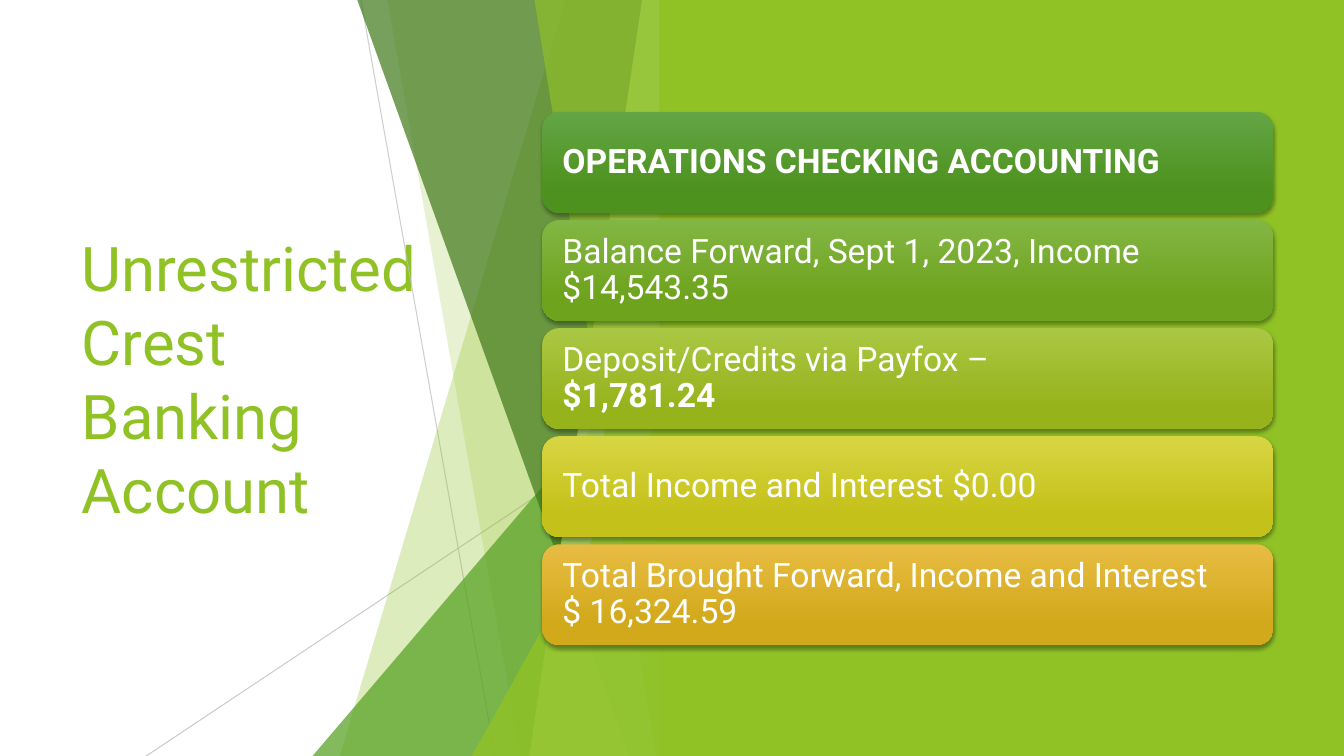
"""Build a slide listing the balances of an operations account."""
from dataclasses import dataclass

from lxml.etree import SubElement as Sub
from pptx import Presentation
from pptx.dml.color import RGBColor as Rgb
from pptx.enum.shapes import MSO_CONNECTOR as Link, MSO_SHAPE as Kind
from pptx.enum.text import MSO_ANCHOR as Anchor, MSO_AUTO_SIZE as Auto, PP_ALIGN as Align
from pptx.oxml.ns import qn
from pptx.util import Inches, Pt


@dataclass(frozen=True)
class Theme:
    font: str = "Roboto"
    title: int = 44
    body: int = 24
    lime: str = "90C226"
    green: str = "54A021"
    dark: str = "3F7819"
    pale: str = "C0E474"
    grey: str = "BFBFBF"
    white: str = "FFFFFF"
    black: str = "000000"


@dataclass(frozen=True)
class Ray:
    start: tuple[float, float]
    end: tuple[float, float]
    alpha: int


@dataclass(frozen=True)
class Blade:
    top: float
    base: float
    tint: str
    alpha: int


@dataclass(frozen=True)
class Wedge:
    left: float
    top: float
    tint: str
    alpha: int


@dataclass(frozen=True)
class Bit:
    text: str
    bold: bool = False


@dataclass(frozen=True)
class Card:
    light: str
    deep: str
    bits: tuple[Bit, ...]


LOOK = Theme()
WIDE, HIGH = 13.33, 7.5
EDGE, ROOF = 6.66, -0.01
CARD_TOP, CARD_END, CARD_HIGH = 1.11, 6.4, 1

RAYS = (
    Ray((3.58, 0), (4.91, HIGH), 75),
    Ray((EDGE, 4.03), (1.45, HIGH), 80),
)
FACETS = (
    Blade(5.61, 3.37, LOOK.lime, 30),
    Blade(3.84, 5.16, LOOK.lime, 20),
    Wedge(3.1, 3.33, LOOK.green, 72),
    Blade(3.54, 6.24, LOOK.dark, 70),
    Blade(6.37, 5.25, LOOK.pale, 70),
    Blade(5.3, 6.51, LOOK.lime, 65),
    Wedge(4.68, 3.93, LOOK.lime, 80),
)
CARDS = (
    Card("63A545", "4D921E", (Bit("OPERATIONS CHECKING ACCOUNTING", True),)),
    Card("82B644", "6EA31D", (Bit("Balance Forward, Sept 1, 2023, Income"), Bit("$14,543.35"))),
    Card("AAC744", "97B31C", (Bit("Deposit/Credits via Payfox –"), Bit("$1,781.24", True))),
    Card("D8D543", "C4C11A", (Bit("Total Income and Interest $0.00"),)),
    Card("E7BC43", "D2A91B", (Bit("Total Brought Forward, Income and Interest"), Bit("$ 16,324.59"))),
)


def fade(fill, alpha: int) -> None:
    tone = fill._xPr.find(".//" + qn("a:srgbClr"))
    Sub(tone, qn("a:alpha"), val=str(alpha * 1000))


def paint(shape, tint: str, alpha: int = 100) -> None:
    shape.shadow.inherit = False
    shape.line.fill.background()
    shape.fill.solid()
    shape.fill.fore_color.rgb = Rgb.from_string(tint)
    if alpha < 100:
        fade(shape.fill, alpha)


def write(para, text: str, *, size: int, tint: str, bold: bool = False) -> None:
    run = para.add_run()
    run.text = text
    run.font.name, run.font.size, run.font.bold = LOOK.font, Pt(size), bold
    run.font.color.rgb = Rgb.from_string(tint)


def draw_title(slide, text: str) -> None:
    title = slide.shapes.title
    title.left, title.top = Inches(0.71), Inches(1.51)
    title.width, title.height = Inches(3.88), Inches(4.48)
    frame = title.text_frame
    frame.word_wrap, frame.auto_size = True, Auto.NONE
    frame.vertical_anchor = Anchor.MIDDLE
    para = frame.paragraphs[0]
    para.alignment = Align.LEFT
    write(para, text, size=LOOK.title, tint=LOOK.lime)


def draw_ray(slide, ray: Ray) -> None:
    ends = [Inches(n) for n in ray.start + ray.end]
    line = slide.shapes.add_connector(Link.STRAIGHT, *ends)
    line.line.width = Pt(0.75)
    line.line.color.rgb = Rgb.from_string(LOOK.grey)
    fade(line.line.fill, ray.alpha)
    Sub(line._element.spPr, qn("a:effectLst"))


def draw_facet(slide, facet: Blade | Wedge) -> None:
    if isinstance(facet, Blade):
        pen = slide.shapes.build_freeform(Inches(facet.top), Inches(ROOF))
        spots = ((EDGE, ROOF), (EDGE, HIGH), (facet.base, HIGH))
        pen.add_line_segments([(Inches(x), Inches(y)) for x, y in spots], close=True)
        shape = pen.convert_to_shape()
    else:
        shape = slide.shapes.add_shape(
            Kind.ISOSCELES_TRIANGLE, Inches(facet.left), Inches(facet.top),
            Inches(EDGE - facet.left), Inches(HIGH - facet.top))
        shape.adjustments[0] = 1
    paint(shape, facet.tint, facet.alpha)


def draw_panel(slide, left: float) -> None:
    panel = slide.shapes.add_shape(
        Kind.RECTANGLE, Inches(left), 0, Inches(WIDE - left), Inches(HIGH))
    paint(panel, LOOK.lime)


def cast(shape) -> None:
    shape.shadow.inherit = False
    holder = shape._element.spPr.find(qn("a:effectLst"))
    shade = Sub(holder, qn("a:outerShdw"), blurRad=str(Pt(3)), dist=str(Pt(2)),
                dir="5400000", rotWithShape="0")
    tone = Sub(shade, qn("a:srgbClr"), val=LOOK.black)
    Sub(tone, qn("a:alpha"), val="35000")


def draw_card(slide, card: Card, top: float) -> None:
    box = slide.shapes.add_shape(
        Kind.ROUNDED_RECTANGLE, Inches(5.38), Inches(top), Inches(7.25), Inches(CARD_HIGH))
    box.line.fill.background()
    box.fill.gradient()
    box.fill.gradient_angle = 270
    marks = ((0, card.light), (0.78, card.deep))
    for stop, (place, tint) in zip(box.fill.gradient_stops, marks):
        stop.position, stop.color.rgb = place, Rgb.from_string(tint)
    cast(box)
    frame = box.text_frame
    frame.word_wrap, frame.vertical_anchor = True, Anchor.MIDDLE
    frame.margin_left = frame.margin_right = Inches(0.15)
    para = frame.paragraphs[0]
    para.alignment, para.line_spacing = Align.LEFT, 0.9
    for rank, bit in enumerate(card.bits):
        if rank:
            para.add_line_break()
        write(para, bit.text, size=LOOK.body, tint=LOOK.white, bold=bit.bold)


def main() -> None:
    deck = Presentation()
    deck.slide_width, deck.slide_height = Inches(WIDE), Inches(HIGH)
    slide = deck.slides.add_slide(deck.slide_layouts[5])
    draw_title(slide, "Unrestricted Crest Banking Account")
    for ray in RAYS:
        draw_ray(slide, ray)
    for facet in FACETS:
        draw_facet(slide, facet)
    draw_panel(slide, 6.54)
    step = (CARD_END - CARD_HIGH - CARD_TOP) / (len(CARDS) - 1)
    for rank, card in enumerate(CARDS):
        draw_card(slide, card, CARD_TOP + rank * step)
    deck.save("out.pptx")


if __name__ == "__main__":
    main()
